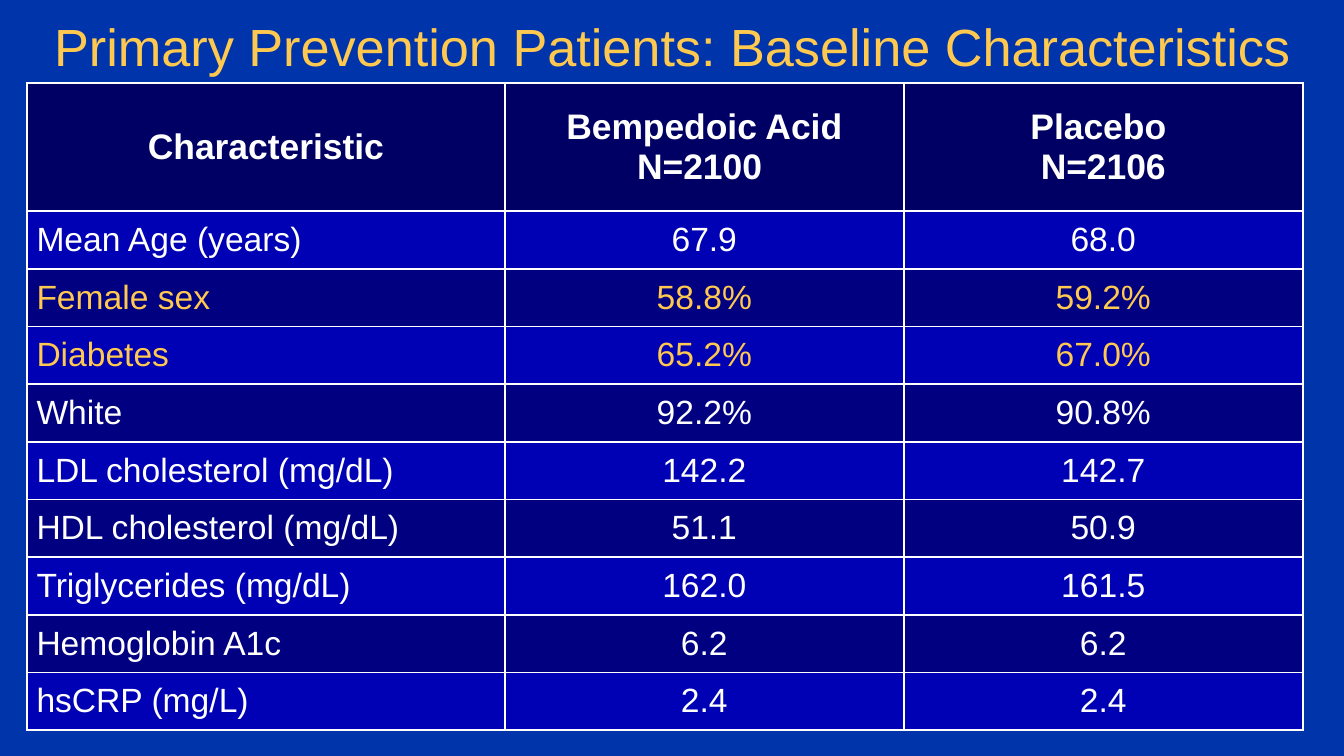
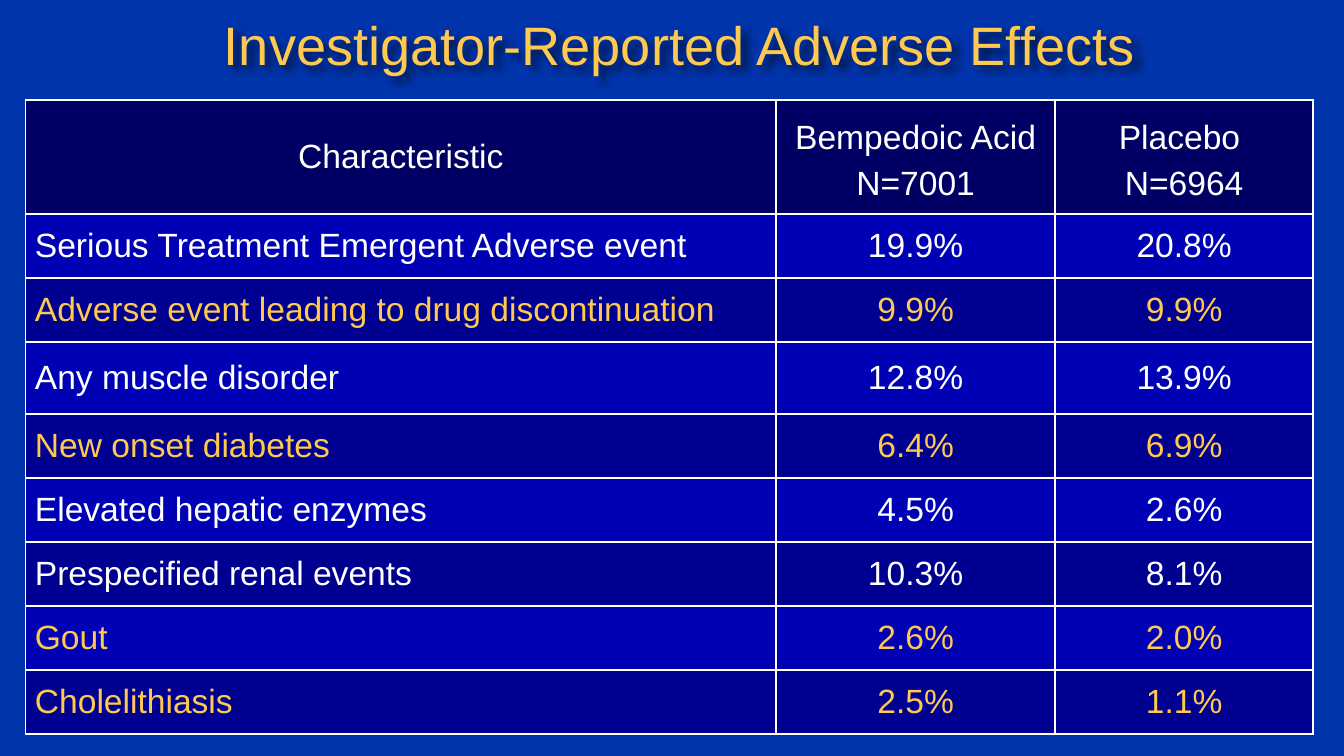
import pptx
import pptx.dml.color
import pptx.enum.text
import pptx.oxml
import pptx.util
from pptx.oxml.ns import nsdecls

Cm = pptx.util.Cm
Pt = pptx.util.Pt
ALIGN = pptx.enum.text.PP_ALIGN
MIDDLE = pptx.enum.text.MSO_ANCHOR.MIDDLE

FONT = "Arial"
COLORS = {
    "background": "0034AA",
    "gold": "FFC94F",
    "white": "FFFFFF",
    "header": "000064",
    "odd": "0000B4",
    "baseline_even": "000080",
    "adverse_even": "000090",
    "shadow": "000000",
}

# Each row: label, bempedoic acid, placebo
BASELINE_HEADER = ["Characteristic", "Bempedoic Acid\nN=2100\t", "Placebo \nN=2106"]
BASELINE_ROWS = [
    ["Mean Age (years)", "67.9", "68.0"],
    ["Female sex", "58.8%", "59.2%"],
    ["Diabetes", "65.2%", "67.0%"],
    ["White", "92.2%", "90.8%"],
    ["LDL cholesterol (mg/dL)", "142.2", "142.7"],
    ["HDL cholesterol (mg/dL)", "51.1", "50.9"],
    ["Triglycerides (mg/dL)", "162.0", "161.5"],
    ["Hemoglobin A1c", "6.2", "6.2"],
    ["hsCRP (mg/L)", "2.4", "2.4"],
]
ADVERSE_HEADER = ["Characteristic", "Bempedoic Acid\nN=7001", "Placebo \nN=6964"]
ADVERSE_ROWS = [
    ["Serious Treatment Emergent Adverse event", "19.9%", "20.8%"],
    ["Adverse event leading to drug discontinuation", "9.9%", "9.9%"],
    ["Any muscle disorder", "12.8%", "13.9%"],
    ["New onset diabetes", "6.4%", "6.9%"],
    ["Elevated hepatic enzymes", "4.5%", "2.6%"],
    ["Prespecified renal events", "10.3%", "8.1%"],
    ["Gout", "2.6%", "2.0%"],
    ["Cholelithiasis", "2.5%", "1.1%"],
]
HIGHLIGHTS = {
    "Female sex", "Diabetes", "Adverse event leading to drug discontinuation",
    "New onset diabetes", "Gout", "Cholelithiasis",
}


def rgb(name):
    return pptx.dml.color.RGBColor.from_string(COLORS[name])


def add_run(paragraph, text, size, color, bold=False):
    run = paragraph.add_run()
    run.text = text
    run.font.name = FONT
    run.font.size = Pt(size)
    run.font.bold = bold
    run.font.color.rgb = rgb(color)


def add_titled_slide(presentation, text, size, left, top, height):
    slide = presentation.slides.add_slide(presentation.slide_layouts[5])
    title = slide.shapes.title
    title.left, title.top = Cm(left), Cm(top)
    title.width, title.height = presentation.slide_width, Cm(height)
    frame = title.text_frame
    frame.word_wrap = True
    frame.auto_size = pptx.enum.text.MSO_AUTO_SIZE.NONE
    frame.vertical_anchor = MIDDLE
    paragraph = frame.paragraphs[0]
    paragraph.alignment = ALIGN.CENTER
    add_run(paragraph, text, size, "gold")
    return slide


def add_soft_shadow(shape):
    shape.element.spPr.append(pptx.oxml.parse_xml(
        f'<a:effectLst {nsdecls("a")}>'
        '<a:outerShdw blurRad="50800" dist="50800" dir="2700000" algn="tl">'
        f'<a:srgbClr val="{COLORS["shadow"]}"><a:alpha val="60000"/></a:srgbClr>'
        '</a:outerShdw></a:effectLst>'))


def set_borders(cell, widths):
    properties = cell._tc.get_or_add_tcPr()
    for side, width in widths.items():
        properties.append(pptx.oxml.parse_xml(
            f'<a:ln{side} {nsdecls("a")} w="{Pt(width)}"><a:solidFill>'
            f'<a:srgbClr val="{COLORS["white"]}"/></a:solidFill></a:ln{side}>'))


def fill_cell(cell, text, fill, borders, size, color, bold, alignment, spacing):
    set_borders(cell, borders)
    cell.fill.solid()
    cell.fill.fore_color.rgb = rgb(fill)
    cell.vertical_anchor = MIDDLE
    cell.margin_left = cell.margin_right = Cm(0.18)
    cell.margin_top = cell.margin_bottom = Cm(0.1)
    lines = text.split("\n")
    for index, line in enumerate(lines):
        frame = cell.text_frame
        paragraph = frame.add_paragraph() if index else frame.paragraphs[0]
        paragraph.alignment = alignment
        if len(lines) > 1:
            paragraph.line_spacing = spacing
        add_run(paragraph, line, size, color, bold)


def add_data_table(slide, left, top, widths, heights, header, rows, even_fill,
                   header_size=18, header_bold=False, header_spacing=None):
    table = slide.shapes.add_table(
        len(heights), len(widths), Cm(left), Cm(top),
        Cm(sum(widths)), Cm(sum(heights))).table
    table.first_row = table.horz_banding = False
    for column, width in zip(table.columns, widths):
        column.width = Cm(width)
    for row, height in zip(table.rows, heights):
        row.height = Cm(height)

    for row_index, values in enumerate([header] + rows):
        is_header = row_index == 0
        borders = {"L": 1, "R": 1,
                   "T": 1.5 if row_index == 1 else 1,
                   "B": 1.5 if is_header else 1}
        fill = "header" if is_header else "odd" if row_index % 2 else even_fill
        color = "gold" if values[0] in HIGHLIGHTS else "white"
        for column_index, text in enumerate(values):
            centered = is_header or column_index > 0
            fill_cell(table.cell(row_index, column_index), text, fill, borders,
                      header_size if is_header else 18, color,
                      is_header and header_bold,
                      ALIGN.CENTER if centered else ALIGN.LEFT,
                      header_spacing)


def main():
    presentation = pptx.Presentation()
    presentation.slide_width, presentation.slide_height = Cm(25.4), Cm(14.29)
    background = presentation.slide_master.background.fill
    background.solid()
    background.fore_color.rgb = rgb("background")

    # Baseline characteristics
    slide = add_titled_slide(
        presentation, "Primary Prevention Patients: Baseline Characteristics",
        28, 0, 0.13, 1.45)
    add_data_table(slide, 0.51, 1.57, [9.03, 7.54, 7.54], [2.42] + [1.09] * 9,
                   BASELINE_HEADER, BASELINE_ROWS, "baseline_even",
                   header_size=19, header_bold=True)

    # Adverse effects
    slide = add_titled_slide(
        presentation, "Investigator-Reported Adverse Effects", 29, 0.15, 0, 1.65)
    add_soft_shadow(slide.shapes.title)
    heights = [2.16] + [1.21] * 2 + [1.35] + [1.21] * 5
    add_data_table(slide, 0.48, 1.89, [14.19, 5.27, 4.88], heights,
                   ADVERSE_HEADER, ADVERSE_ROWS, "adverse_even",
                   header_spacing=1.2)

    presentation.save("out.pptx")


if __name__ == "__main__":
    main()
